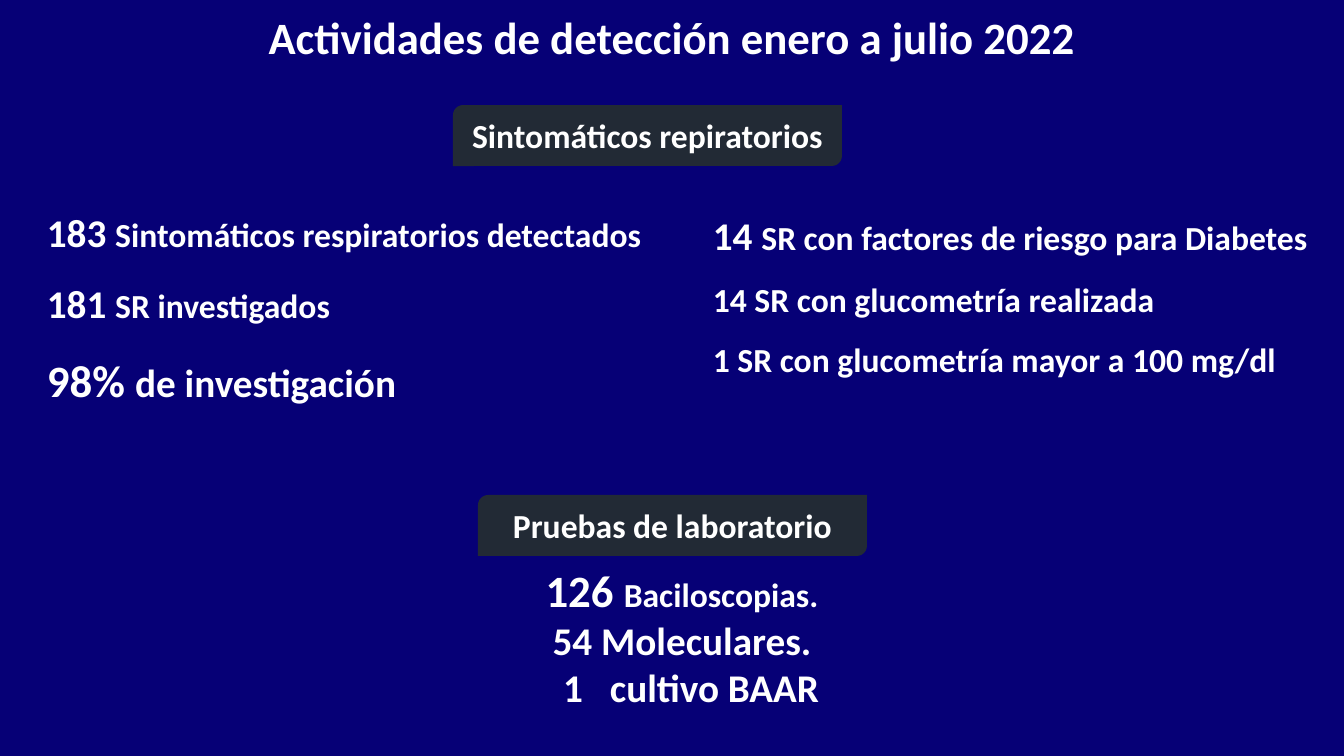
from pptx import Presentation
from pptx.dml.color import RGBColor
from pptx.enum.shapes import MSO_SHAPE as Shape
from pptx.enum.text import MSO_ANCHOR as Anchor, PP_ALIGN as Align
from pptx.util import Emu, Pt

NAVY = RGBColor(0x06, 0x00, 0x76)
SLATE = RGBColor(0x22, 0x2A, 0x35)
WHITE = RGBColor(0xFF, 0xFF, 0xFF)
SCALE = 914400 / 100.8


def px(*sizes):
    """Turn pixel lengths into EMU."""
    return [Emu(round(size * SCALE)) for size in sizes]


class Board:
    """Hold the deck, its style and the current slide."""

    def __init__(self, wide, high, font="Calibri"):
        """Open a blank slide on a navy ground."""
        self.deck = Presentation()
        self.deck.slide_width, self.deck.slide_height = px(wide, high)
        self.slide = self.deck.slides.add_slide(self.deck.slide_layouts[6])
        self.font = font
        fill = self.slide.background.fill
        fill.solid()
        fill.fore_color.rgb = NAVY

    def line(self, par, runs, align, space=1.0, indent=0):
        """Fill one paragraph with (text, size, tracking) runs."""
        par.alignment = align
        par.line_spacing = space
        font = par.font
        font.name, font.bold, font.color.rgb = self.font, True, WHITE
        sizes = {size for _, size, *_ in runs}
        if len(sizes) == 1:
            font.size = Pt(sizes.pop())
        for text, size, *track in runs:
            run = par.add_run()
            run.text = text
            if font.size is None:
                run.font.size = Pt(size)
            if track:
                run._r.get_or_add_rPr().set("spc", str(track[0]))
        if indent:
            par._p.get_or_add_pPr().set("marL", str(px(indent)[0]))

    def text(self, box, lines, align=Align.LEFT):
        """Add a text box of (runs, spacing, indent) lines."""
        frame = self.slide.shapes.add_textbox(*px(*box)).text_frame
        frame.word_wrap = True
        for i, (runs, *more) in enumerate(lines):
            par = frame.add_paragraph() if i else frame.paragraphs[0]
            self.line(par, runs, align, *more)

    def label(self, left, top, text):
        """Add a slate heading with two round corners."""
        shape = self.slide.shapes.add_shape(
            Shape.ROUND_2_DIAG_RECTANGLE, *px(left, top, 389, 61))
        shape.shadow.inherit = False
        shape.fill.solid()
        shape.fill.fore_color.rgb = SLATE
        shape.line.fill.background()
        frame = shape.text_frame
        frame.word_wrap = True
        frame.vertical_anchor = Anchor.MIDDLE
        self.line(frame.paragraphs[0], [(text, 24)], Align.CENTER)

    def save(self):
        """Write the deck."""
        self.deck.save("out.pptx")


def main():
    """Build the slide."""
    board = Board(1344, 756)
    board.label(453, 105, "Sintomáticos repiratorios")
    board.text((37, 180, 644, 226), [
        ([("183 ", 28), ("Sintomáticos respiratorios detectados", 24)], 1.5),
        ([("181 ", 28), ("SR investigados", 24)], 1.5),
        ([("98% ", 32), ("de investigación", 28)], 1.5),
    ])
    board.label(478, 495, "Pruebas de laboratorio")
    board.text((338, 531, 688, 186), [
        ([("126 ", 32), ("Baciloscopias.", 24)], 1.5),
        ([("54 Moleculares.", 28)],),
        ([("1", 28), (" ", 28, 1300), ("cultivo BAAR", 28)], 1.0, 18),
    ], Align.CENTER)
    board.text((0, 5, 1344, 65), [
        ([("Actividades de detección enero a julio 2022", 32)],),
    ], Align.CENTER)
    board.text((703, 183, 641, 198), [
        ([("14 ", 28), ("SR con factores de riesgo para Diabetes", 24)], 1.5),
        ([("14 SR con glucometría realizada", 24)], 1.5),
        ([("1 SR con glucometría mayor a 100 mg/dl", 24)], 1.5),
    ])
    board.save()


if __name__ == "__main__":
    main()
